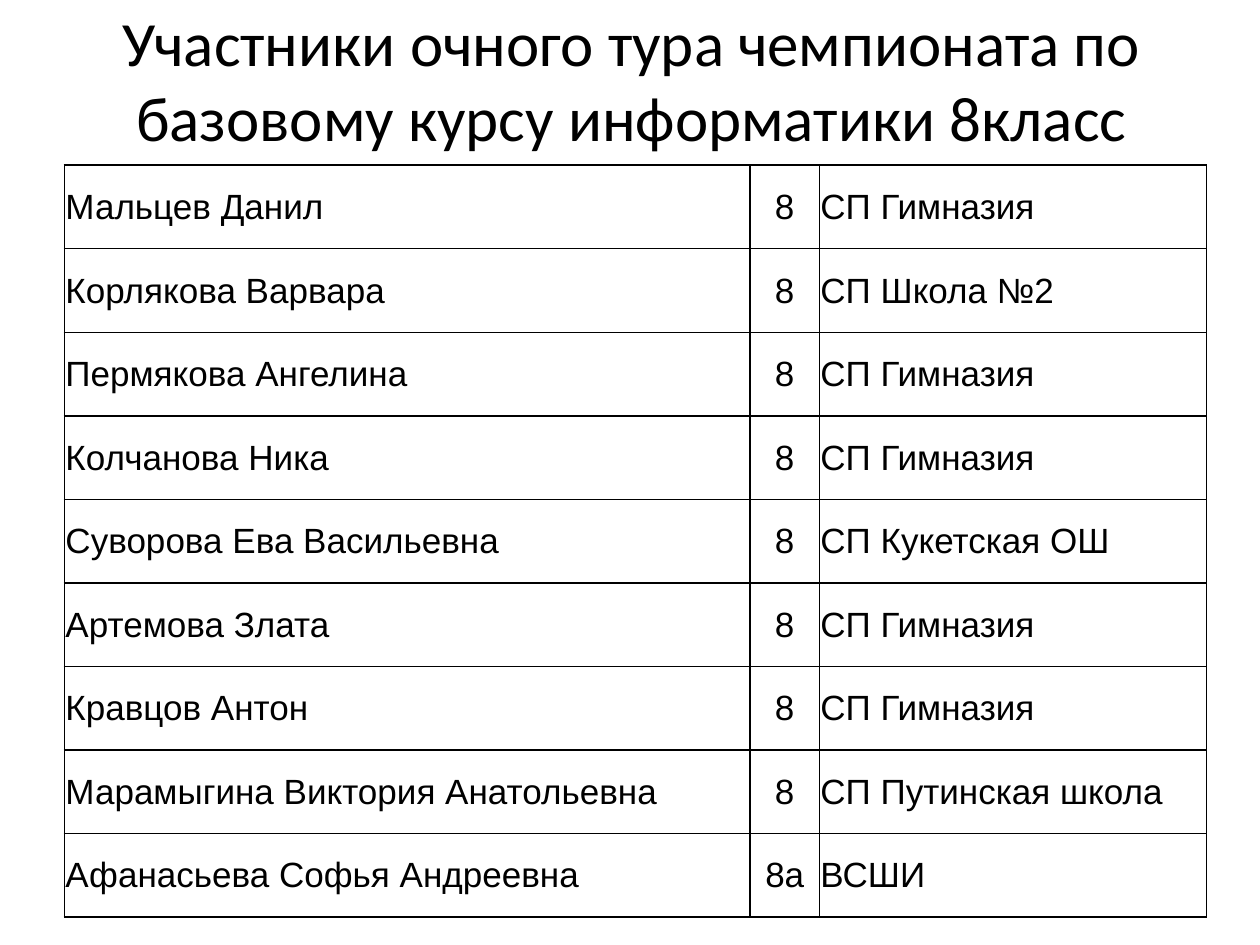
from lxml.etree import SubElement
from pptx import Presentation
from pptx.dml.color import RGBColor
from pptx.enum.text import MSO_ANCHOR as Anchor, PP_ALIGN as Align
from pptx.oxml.ns import qn
from pptx.util import Cm, Pt

TITLE = "Участники очного тура чемпионата по базовому курсу информатики 8класс"
PARTICIPANTS = [
    ("Мальцев Данил", "8", "СП Гимназия"),
    ("Корлякова Варвара", "8", "СП Школа №2"),
    ("Пермякова Ангелина", "8", "СП Гимназия"),
    ("Колчанова Ника", "8", "СП Гимназия"),
    ("Суворова Ева Васильевна", "8", "СП Кукетская ОШ"),
    ("Артемова Злата", "8", "СП Гимназия"),
    ("Кравцов Антон", "8", "СП Гимназия"),
    ("Марамыгина Виктория Анатольевна", "8", "СП Путинская школа"),
    ("Афанасьева Софья Андреевна", "8а", "ВСШИ"),
]
COLUMN_WIDTHS = (13.82, 1.4, 7.8)
COLUMN_ALIGNS = (Align.LEFT, Align.CENTER, Align.LEFT)


def color(code):
    return RGBColor.from_string(code)


class SlideBuilder:
    ink = "000000"
    title_font, title_size = "Calibri", 36
    table_font, table_size = "Arial", 20
    border_width = 1
    cell_margin = 0.02

    def __init__(self, page):
        self.page = page

    def set_text(self, frame, text, font, size, align):
        para = frame.paragraphs[0]
        para.text = text
        para.alignment = align
        para.font.name = font
        para.font.size = Pt(size)
        para.font.color.rgb = color(self.ink)

    def title(self, text, left, top, width, height):
        box = self.page.shapes.add_textbox(Cm(left), Cm(top), Cm(width), Cm(height))
        frame = box.text_frame
        frame.word_wrap = True
        frame.vertical_anchor = Anchor.MIDDLE
        self.set_text(frame, text, self.title_font, self.title_size, Align.CENTER)

    def table(self, rows, widths, aligns, left, top, height):
        frame = self.page.shapes.add_table(
            len(rows), len(widths), Cm(left), Cm(top), Cm(sum(widths)), Cm(height))
        table = frame.table
        table.first_row = table.horz_banding = False
        for column, width in zip(table.columns, widths):
            column.width = Cm(width)
        for row, values in zip(table.rows, rows):
            for cell, value, align in zip(row.cells, values, aligns):
                self.cell(cell, value, align)

    def cell(self, cell, text, align):
        cell.fill.background()
        cell.vertical_anchor = Anchor.MIDDLE
        cell.margin_left = cell.margin_right = cell.margin_top = Cm(self.cell_margin)
        cell.margin_bottom = 0
        self.set_text(cell.text_frame, text, self.table_font, self.table_size, align)
        self.borders(cell)

    def borders(self, cell):
        """Draw all four sides; the schema wants them ahead of the fill."""
        properties = cell._tc.get_or_add_tcPr()
        for place, side in enumerate(("a:lnL", "a:lnR", "a:lnT", "a:lnB")):
            line = SubElement(properties, qn(side), w=str(Pt(self.border_width)))
            fill = SubElement(line, qn("a:solidFill"))
            SubElement(fill, qn("a:srgbClr"), val=self.ink)
            properties.insert(place, line)


def main():
    deck = Presentation()
    deck.slide_width, deck.slide_height = Cm(25.4), Cm(19.05)
    builder = SlideBuilder(deck.slides.add_slide(deck.slide_layouts[6]))
    builder.title(TITLE, 1.3, 0, 22.86, 3.18)
    builder.table(PARTICIPANTS, COLUMN_WIDTHS, COLUMN_ALIGNS, 1.3, 3.33, 15.16)
    deck.save("out.pptx")


if __name__ == "__main__":
    main()
